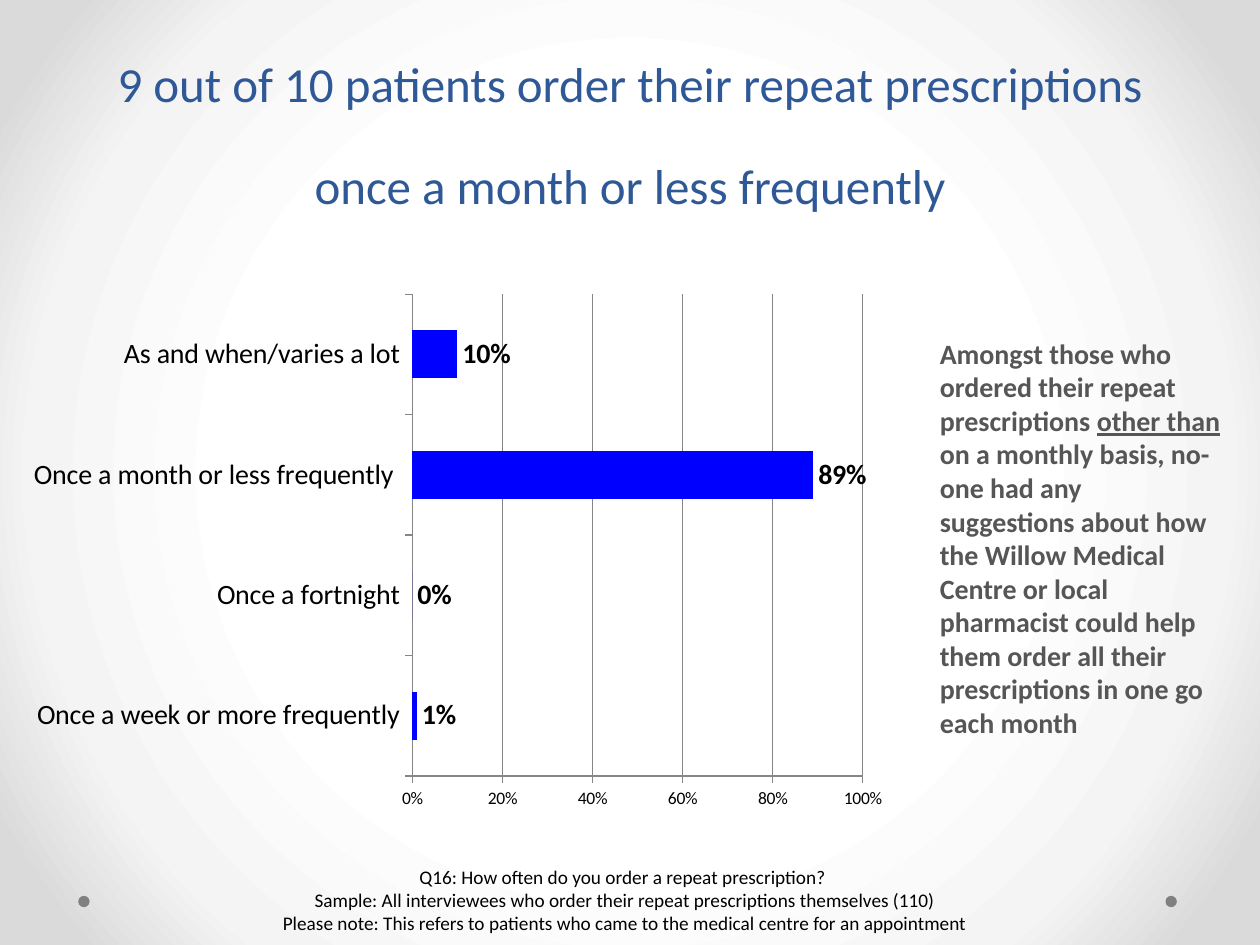
import pptx
import pptx.chart.data
import pptx.dml.color
import pptx.enum.chart
import pptx.enum.shapes
import pptx.enum.text
import pptx.oxml
import pptx.oxml.ns
import pptx.util

Pt = pptx.util.Pt
FONT = "Calibri"


def color(hex_string):
    return pptx.dml.color.RGBColor.from_string(hex_string)


def add_text(left, top, width, height, lines, size, hex_string):
    box = slide.shapes.add_textbox(Pt(left), Pt(top), Pt(width), Pt(height))
    box.text_frame.word_wrap = True
    para = box.text_frame.paragraphs[0]
    para.text = "\v".join(lines)
    para.font.name = FONT
    para.font.size = Pt(size)
    para.font.color.rgb = color(hex_string)
    return box.text_frame, para


deck = pptx.Presentation()
deck.slide_width, deck.slide_height = Pt(720), Pt(540)
slide = deck.slides.add_slide(deck.slide_layouts[6])

# Background: radial gradient from a white centre
slide.background.fill.gradient()
gradient = slide.element.xpath("p:cSld/p:bg//a:gradFill")[0]
stops = "".join(
    f'<a:gs pos="{percent * 1000}"><a:srgbClr val="{shade}"/></a:gs>'
    for percent, shade in [(50, "FFFFFF"), (76, "F4F4F4"), (92, "DADADA")]
)
radial = pptx.oxml.parse_xml(
    f'<a:gradFill {pptx.oxml.ns.nsdecls("a")} rotWithShape="1"><a:gsLst>{stops}</a:gsLst>'
    '<a:path path="circle"><a:fillToRect l="50000" t="50000" r="50000" b="50000"/></a:path>'
    "</a:gradFill>"
)
gradient.getparent().replace(gradient, radial)

# Corner dots
for left in (44.7, 666):
    dot = slide.shapes.add_shape(
        pptx.enum.shapes.MSO_SHAPE.OVAL, Pt(left), Pt(511.9), Pt(6.5), Pt(6.5))
    dot.shadow.inherit = False
    dot.fill.solid()
    dot.fill.fore_color.rgb = color("808080")
    dot.line.fill.background()

# Title
frame, para = add_text(0, 0, 720, 126, [
    "9 out of 10 patients order their repeat prescriptions",
    "once a month or less frequently",
], 28, "2F5897")
frame.vertical_anchor = pptx.enum.text.MSO_ANCHOR.BOTTOM
para.alignment = pptx.enum.text.PP_ALIGN.CENTER
para.line_spacing = Pt(58)

# Question and sample note
frame, para = add_text(36.7, 491, 640.8, 60.5, [
    "Q16: How often do you order a repeat prescription? ",
    "Sample: All interviewees who order their repeat prescriptions themselves (110)",
    "Please note: This refers to patients who came to the medical centre for an appointment",
], 11, "000000")
para.alignment = pptx.enum.text.PP_ALIGN.CENTER

# Bar chart of ordering frequency
data = pptx.chart.data.CategoryChartData(number_format="0%")
data.categories = [
    "Once a week or more frequently",
    "Once a fortnight",
    "Once a month or less frequently ",
    "As and when/varies a lot",
]
data.add_series("Series 1", [0.01, 0, 0.89, 0.1])
chart = slide.shapes.add_chart(
    pptx.enum.chart.XL_CHART_TYPE.BAR_CLUSTERED,
    Pt(8.6), Pt(162), Pt(504.7), Pt(306), data).chart
chart.has_legend = False
chart.has_title = False
chart.font.name = FONT
chart.font.size = Pt(10)
chart.font.color.rgb = color("000000")

plot = chart.plots[0]
plot.gap_width = 150
plot.vary_by_categories = False
bars = plot.series[0]
bars.format.fill.solid()
bars.format.fill.fore_color.rgb = color("0000FF")

labels = bars.data_labels
labels.show_value = True
labels.number_format = "0%"
labels.number_format_is_linked = False
labels.position = pptx.enum.chart.XL_LABEL_POSITION.OUTSIDE_END
labels.font.name = FONT
labels.font.size = Pt(16)
labels.font.bold = True
labels.font.color.rgb = color("000000")

# Axes and grid
category_axis, value_axis = chart.category_axis, chart.value_axis
for axis in (category_axis, value_axis):
    axis.major_tick_mark = pptx.enum.chart.XL_TICK_MARK.OUTSIDE
    axis.format.line.color.rgb = color("868686")
category_axis.tick_labels.font.size = Pt(16)
value_axis.minimum_scale = 0
value_axis.maximum_scale = 1
value_axis.major_unit = 0.2
value_axis.has_major_gridlines = True
value_axis.major_gridlines.format.line.color.rgb = color("868686")
value_axis.tick_labels.number_format = "0%"
value_axis.tick_labels.number_format_is_linked = False

# Fixed plot area, as fractions of the chart
plot_area = chart.element.xpath("c:chart/c:plotArea")[0]
for old_layout in plot_area.xpath("c:layout"):
    plot_area.remove(old_layout)
fractions = "".join(
    f'<c:{name} val="{value}"/>'
    for name, value in [("x", 0.45), ("y", 0.02), ("w", 0.51), ("h", 0.9)]
)
plot_area.insert(0, pptx.oxml.parse_xml(
    f'<c:layout {pptx.oxml.ns.nsdecls("c")}><c:manualLayout><c:layoutTarget val="inner"/>'
    f'<c:xMode val="edge"/><c:yMode val="edge"/>{fractions}</c:manualLayout></c:layout>'
))

# Commentary beside the chart
frame, para = add_text(
    530, 188.6, 175.7, 239.8,
    ["Amongst those who ordered their repeat prescriptions "], 16, "565656")
para.font.bold = True
span = para.add_run()
span.text = "other than"
span.font.underline = True
span = para.add_run()
span.text = (
    " on a monthly basis, no-one had any suggestions about how the Willow Medical "
    "Centre or local pharmacist could help them order all their prescriptions "
    "in one go each month"
)

deck.save("out.pptx")
